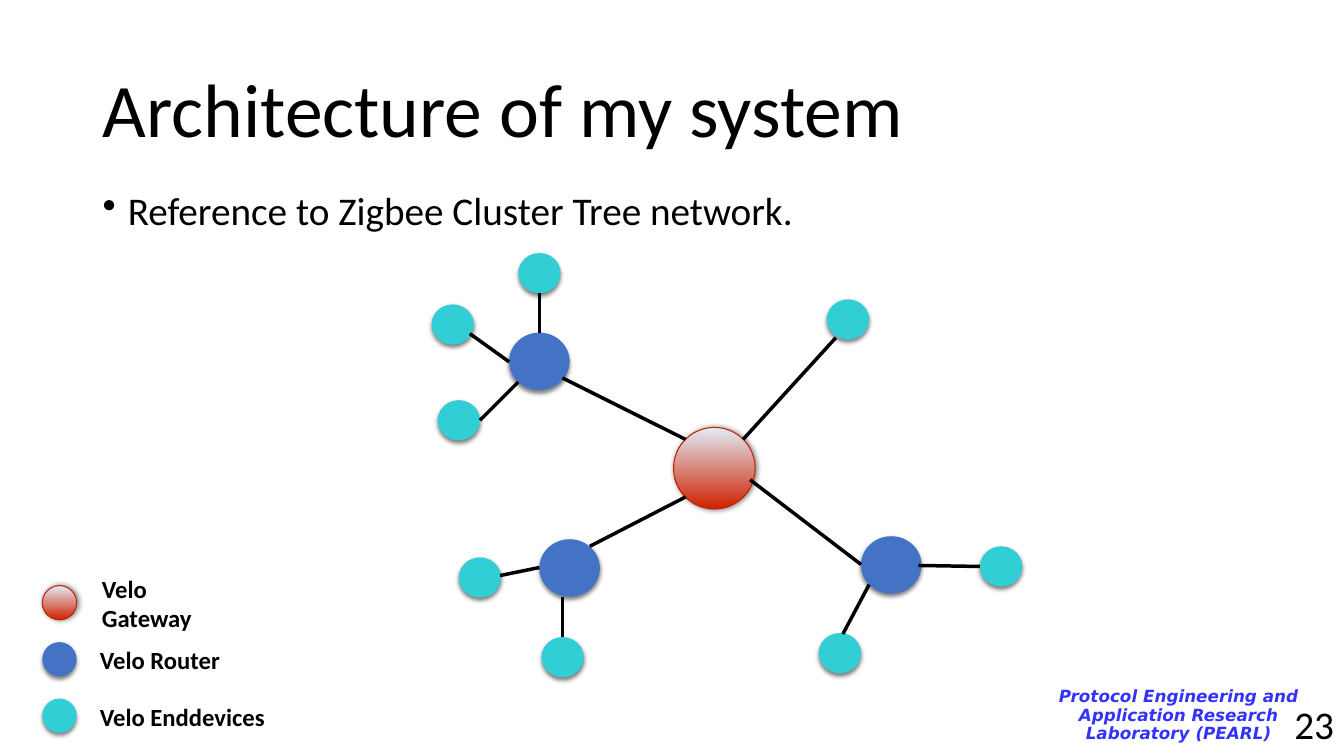
import pptx
import pptx.dml.color
import pptx.enum.shapes
import pptx.enum.text
import pptx.oxml
import pptx.oxml.ns
import pptx.util
from lxml import etree

EMU_PER_PX = 9144
ALIGN = pptx.enum.text.PP_ALIGN
ANCHOR = pptx.enum.text.MSO_ANCHOR

NODES = {
    "gateway": {"size": (81, 81), "fill": ("CE2100", "E2EDF7"), "shadow": (4, 1, 0)},
    "router": {"size": (60, 57), "fill": ("4472C4",), "shadow": (3, 2, 90)},
    "end device": {"size": (42, 40), "fill": ("31CFD5",), "shadow": (3, 2, 90)},
}
NETWORK = {
    "gateway": [(668, 424)],
    "router": [(505, 330), (535, 535), (854, 532)],
    "end device": [(428, 302), (514, 251), (434, 397), (455, 553),
                   (537, 632), (820, 297), (972, 542), (812, 628)],
}
LINKS = [
    (535, 291, 535, 330), (466, 331, 505, 359), (476, 417, 514, 379),
    (558, 375, 680, 436), (911, 561, 972, 562), (737, 436, 829, 335),
    (558, 592, 558, 632), (496, 571, 535, 563), (585, 542, 680, 493),
    (744, 476, 854, 560), (836, 629, 862, 580),
]
LEGEND = [
    ("gateway", "Velo Gateway", 97, 147),
    ("router", "Velo Router", 95, 128),
    ("end device", "Velo Enddevices", 95, 172),
]


def px(length):
    """Turn whole px into EMU."""
    return pptx.util.Emu(length * EMU_PER_PX)


def color(hex_code):
    """Turn a hex string into a colour."""
    return pptx.dml.color.RGBColor.from_string(hex_code)


def add_text(slide, box, text, size, font="Calibri", ink="000000", bold=False,
             italic=False, align=ALIGN.LEFT, anchor=ANCHOR.MIDDLE,
             insets=(10, 5), spacing=1.0, bullet_indent=0):
    """Add a wrapping text box with one paragraph and return nothing."""
    frame = slide.shapes.add_textbox(*map(px, box)).text_frame
    frame.word_wrap = True
    frame.vertical_anchor = anchor
    frame.margin_left = frame.margin_right = px(insets[0])
    frame.margin_top = frame.margin_bottom = px(insets[1])
    paragraph = frame.paragraphs[0]
    paragraph.text = text
    if bullet_indent:
        properties = paragraph._p.get_or_add_pPr()
        properties.set("marL", str(px(bullet_indent)))
        properties.set("indent", str(-px(bullet_indent)))
        bullet = etree.SubElement(properties, pptx.oxml.ns.qn("a:buChar"))
        bullet.set("char", "•")
    paragraph.alignment = align
    paragraph.line_spacing = spacing
    paragraph.font.name = font
    paragraph.font.size = pptx.util.Pt(size)
    paragraph.font.bold = bold
    paragraph.font.italic = italic
    paragraph.font.color.rgb = color(ink)


def add_shadow(shape, blur, distance, angle):
    """Give a shape a half-transparent black shadow."""
    shape.shadow.inherit = False
    effects = shape._element.spPr.find(pptx.oxml.ns.qn("a:effectLst"))
    effects.append(pptx.oxml.parse_xml(
        f'<a:outerShdw {pptx.oxml.ns.nsdecls("a")} blurRad="{pptx.util.Pt(blur)}" '
        f'dist="{pptx.util.Pt(distance)}" dir="{angle * 60000}" rotWithShape="0">'
        '<a:srgbClr val="000000"><a:alpha val="50000"/></a:srgbClr></a:outerShdw>'))


def add_node(slide, kind, left, top, size=None):
    """Draw the circle for one kind of network node."""
    node = NODES[kind]
    width, height = size or node["size"]
    shape = slide.shapes.add_shape(pptx.enum.shapes.MSO_SHAPE.OVAL,
                                   px(left), px(top), px(width), px(height))
    if len(node["fill"]) == 2:
        shape.fill.gradient()
        shape.fill.gradient_angle = 90
        for stop, hex_code in zip(shape.fill.gradient_stops, node["fill"]):
            stop.color.rgb = color(hex_code)
        shape.line.color.rgb = color("C82101")
        shape.line.width = pptx.util.Pt(0.75)
    else:
        shape.fill.solid()
        shape.fill.fore_color.rgb = color(node["fill"][0])
        shape.line.fill.background()
    add_shadow(shape, *node["shadow"])


def add_link(slide, ends):
    """Draw a straight black line between two nodes."""
    connector = slide.shapes.add_connector(
        pptx.enum.shapes.MSO_CONNECTOR.STRAIGHT, *map(px, ends))
    connector.line.color.rgb = color("000000")
    connector.line.width = pptx.util.Pt(2.5)
    etree.SubElement(connector._element.spPr, pptx.oxml.ns.qn("a:effectLst"))


def add_legend(slide):
    """Add one circle and label for each kind of node."""
    for row, (kind, label, left, width) in enumerate(LEGEND):
        top = 581 + 56 * row
        add_node(slide, kind, 42, top, (34, 34))
        add_text(slide, (left, top - 1, width, 37), label, 17.6,
                 bold=True, insets=(4, 4))


def main():
    """Build and save the slide."""
    presentation = pptx.Presentation()
    presentation.slide_width = px(1333)
    presentation.slide_height = px(750)
    slide = presentation.slides.add_slide(presentation.slide_layouts[6])
    add_text(slide, (1023, 676, 292, 68),
             "Protocol Engineering and Application Research Laboratory (PEARL)",
             12, font="DejaVu Sans", ink="3333FF", bold=True, italic=True,
             align=ALIGN.CENTER, anchor=ANCHOR.TOP, insets=(13, 7), spacing=0.9)
    add_text(slide, (92, 40, 1150, 145), "Architecture of my system", 54, spacing=0.9)
    add_text(slide, (92, 185, 1150, 66), "Reference to Zigbee Cluster Tree network.",
             28, anchor=ANCHOR.TOP, spacing=0.9, bullet_indent=25)
    for kind, places in NETWORK.items():
        for left, top in places:
            add_node(slide, kind, left, top)
    for ends in LINKS:
        add_link(slide, ends)
    add_legend(slide)
    add_text(slide, (1236, 698, 97, 40), "23", 28, align=ALIGN.RIGHT)
    presentation.save("out.pptx")


if __name__ == "__main__":
    main()
